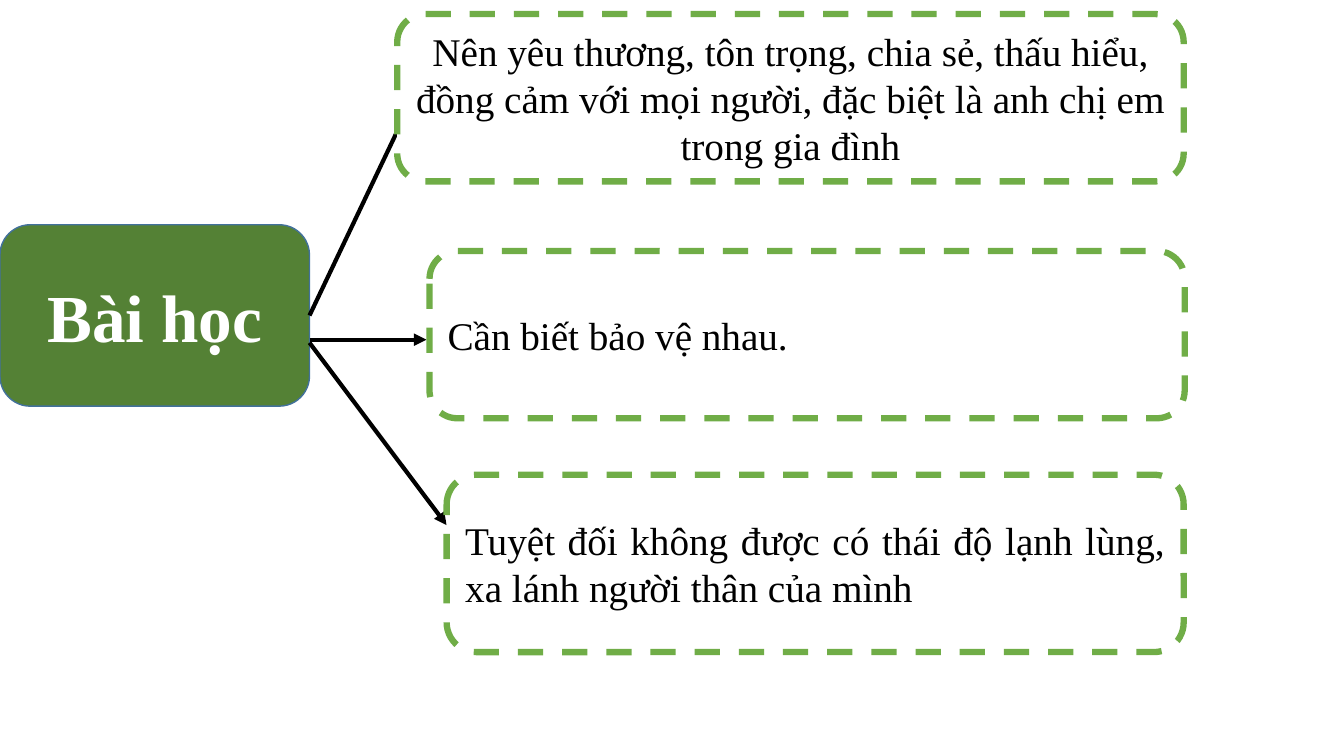
from dataclasses import dataclass

from lxml.etree import SubElement
from pptx import Presentation
from pptx.dml.color import RGBColor
from pptx.enum.dml import MSO_LINE_DASH_STYLE as Dash
from pptx.enum.shapes import MSO_CONNECTOR_TYPE as Connector, MSO_SHAPE as Shape
from pptx.enum.text import MSO_ANCHOR as Anchor, PP_ALIGN as Align
from pptx.oxml.ns import qn
from pptx.util import Inches, Pt


@dataclass(frozen=True)
class Theme:
    """Colours, type sizes and line widths of the slide."""
    font: str = "Times New Roman"
    topic_fill: str = "548135"
    topic_line: str = "42719B"
    lesson_line: str = "70AD47"
    white: str = "FFFFFF"
    black: str = "000000"
    topic_size: int = 48
    lesson_size: int = 28
    topic_width: int = 1
    lesson_width: float = 4.5
    arrow_width: int = 3


THEME = Theme()
TOPIC_BOX = (0, 2.23, 3.07, 1.8)
TOPIC_RIGHT = TOPIC_BOX[0] + TOPIC_BOX[2]
LESSONS = [
    ("Nên yêu thương, tôn trọng, chia sẻ, thấu hiểu, đồng cảm với mọi người, "
     "đặc biệt là anh chị em trong gia đình", (3.94, 0.14, 7.8, 1.66), Align.CENTER),
    ("Cần biết bảo vệ nhau.", (4.26, 2.49, 7.49, 1.66), Align.JUSTIFY),
    ("Tuyệt đối không được có thái độ lạnh lùng, xa lánh người thân của mình",
     (4.43, 4.71, 7.31, 1.76), Align.JUSTIFY),
]
ARROWS = [(3.13, 4.26, 0.63), (3.37, 4.23, 3.37), (3.4, 4.43, 5.21)]


def write_text(shape, text, *, size, color, align, bold=False):
    """Write one formatted paragraph, centred vertically in a shape."""
    frame = shape.text_frame
    frame.word_wrap = True
    frame.vertical_anchor = Anchor.MIDDLE
    paragraph = frame.paragraphs[0]
    paragraph.alignment = align
    run = paragraph.add_run()
    run.text = text
    run.font.name = THEME.font
    run.font.size = Pt(size)
    run.font.bold = bold
    run.font.color.rgb = RGBColor.from_string(color)


def add_box(slide, box, *, fill, line, width, dash=None):
    """Add a rounded box with a solid fill and an outline."""
    shape = slide.shapes.add_shape(Shape.ROUNDED_RECTANGLE, *map(Inches, box))
    shape.shadow.inherit = False
    shape.fill.solid()
    shape.fill.fore_color.rgb = RGBColor.from_string(fill)
    shape.line.color.rgb = RGBColor.from_string(line)
    shape.line.width = Pt(width)
    if dash:
        shape.line.dash_style = dash
    return shape


def add_arrow(slide, start_y, end_x, end_y):
    """Add an arrow from the right edge of the topic to a point."""
    ends = map(Inches, (TOPIC_RIGHT, start_y, end_x, end_y))
    arrow = slide.shapes.add_connector(Connector.STRAIGHT, *ends)
    arrow.line.color.rgb = RGBColor.from_string(THEME.black)
    arrow.line.width = Pt(THEME.arrow_width)
    properties = arrow.element.spPr
    SubElement(properties.find(qn("a:ln")), qn("a:tailEnd"), type="triangle")
    SubElement(properties, qn("a:effectLst"))


def main():
    """Build the lesson map and save it."""
    presentation = Presentation()
    presentation.slide_width = Inches(13.33)
    presentation.slide_height = Inches(7.5)
    slide = presentation.slides.add_slide(presentation.slide_layouts.get_by_name("Blank"))

    topic = add_box(slide, TOPIC_BOX, fill=THEME.topic_fill,
                    line=THEME.topic_line, width=THEME.topic_width)
    write_text(topic, "Bài học", size=THEME.topic_size, color=THEME.white,
               align=Align.CENTER, bold=True)
    for arrow in ARROWS:
        add_arrow(slide, *arrow)
    for text, box, align in LESSONS:
        lesson = add_box(slide, box, fill=THEME.white, line=THEME.lesson_line,
                         width=THEME.lesson_width, dash=Dash.DASH)
        write_text(lesson, text, size=THEME.lesson_size, color=THEME.black, align=align)

    presentation.save("out.pptx")


if __name__ == "__main__":
    main()
